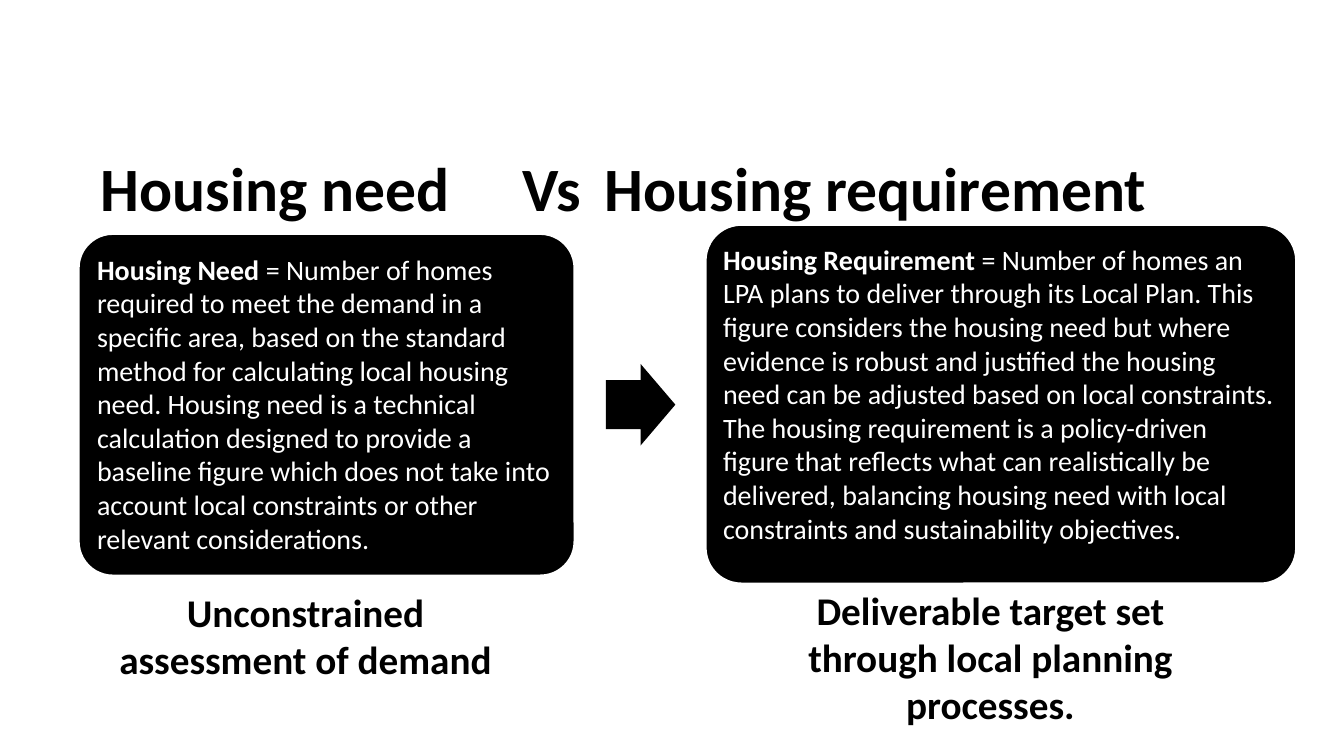
from pptx import Presentation
from pptx.dml.color import RGBColor
from pptx.enum.shapes import MSO_SHAPE
from pptx.enum.text import MSO_ANCHOR, PP_ALIGN
from pptx.oxml.ns import qn
from pptx.util import Pt
from lxml import etree

ROUND, ARROW = MSO_SHAPE.ROUNDED_RECTANGLE, MSO_SHAPE.RIGHT_ARROW
TOP, MIDDLE = MSO_ANCHOR.TOP, MSO_ANCHOR.MIDDLE
LEFT, CENTER = PP_ALIGN.LEFT, PP_ALIGN.CENTER
BLACK = RGBColor(0, 0, 0)
WHITE = RGBColor(255, 255, 255)
FONT = "Calibri"

TITLE = "Housing need\tVs \tHousing requirement"
TITLE_AT = (33.12, 62.64, 915.12, 147.6)
TABS = (301, 360)
ARROW_AT = (432.72, 259.92, 49.68, 58.32)

CARDS = [
    ((56.16, 167.04, 354.24, 244.08), 6, "Housing Need ",
     "= Number of homes required to meet the demand in a specific area, "
     "based on the standard method for calculating local housing need. "
     "Housing need is a technical calculation designed to provide a baseline "
     "figure which does not take into account local constraints or other "
     "relevant considerations."),
    ((504, 160.56, 421.92, 256.32), 5, "Housing Requirement ",
     "= Number of homes an LPA plans to deliver through its Local Plan. "
     "This figure considers the housing need but where evidence is robust "
     "and justified the housing need can be adjusted based on local "
     "constraints. The housing requirement is a policy-driven figure that "
     "reflects what can realistically be delivered, balancing housing need "
     "with local constraints and sustainability objectives."),
]

NOTES = [
    ((67.68, 416.88, 300.96, 74.88), 0, "Unconstrained assessment of demand"),
    ((491.04, 415.44, 396.72, 108.72), 1,
     "Deliverable target set through local planning processes."),
]


def place(at):
    return [Pt(v) for v in at]


def add_run(para, text, size, color, bold):
    run = para.add_run()
    run.text = text
    font = run.font
    font.name, font.size, font.bold = FONT, Pt(size), bold
    font.color.rgb = color


def add_shape(kind, at, adjust):
    shape = slide.shapes.add_shape(kind, *place(at))
    shape.shadow.inherit = False
    for i, value in enumerate(adjust):
        shape.adjustments[i] = value
    shape.fill.solid()
    shape.fill.fore_color.rgb = BLACK
    shape.line.fill.background()
    return shape


def add_box(at, anchor):
    frame = slide.shapes.add_textbox(*place(at)).text_frame
    frame.word_wrap = True
    frame.vertical_anchor = anchor
    return frame


def add_title():
    frame = add_box(TITLE_AT, MIDDLE)
    frame.margin_left = Pt(39)
    para = frame.paragraphs[0]
    para.line_spacing = 0.9
    stops = etree.SubElement(para._p.get_or_add_pPr(), qn("a:tabLst"))
    for pos in TABS:
        etree.SubElement(stops, qn("a:tab"), pos=str(Pt(pos)), algn="l")
    add_run(para, TITLE, 44, BLACK, True)


def add_card(at, inset, term, text):
    card = add_shape(ROUND, at, [0.1])
    card.line.color.rgb = WHITE
    card.line.width = Pt(1.5)
    frame = card.text_frame
    frame.word_wrap = True
    frame.vertical_anchor = TOP
    frame.margin_left = frame.margin_right = Pt(inset)
    frame.margin_top = frame.margin_bottom = Pt(inset)
    para = frame.paragraphs[0]
    para.alignment = LEFT
    add_run(para, term, 20, WHITE, True)
    add_run(para, text, 20, WHITE, False)


def add_note(at, level, text):
    para = add_box(at, TOP).paragraphs[0]
    para.level = level
    para.alignment = CENTER
    add_run(para, text, 28, BLACK, True)


deck = Presentation()
deck.slide_width, deck.slide_height = Pt(960), Pt(540)
slide = deck.slides.add_slide(deck.slide_layouts[6])
add_title()
for card in CARDS:
    add_card(*card)
add_shape(ARROW, ARROW_AT, [0.6, 0.5])
for note in NOTES:
    add_note(*note)
deck.save("out.pptx")
